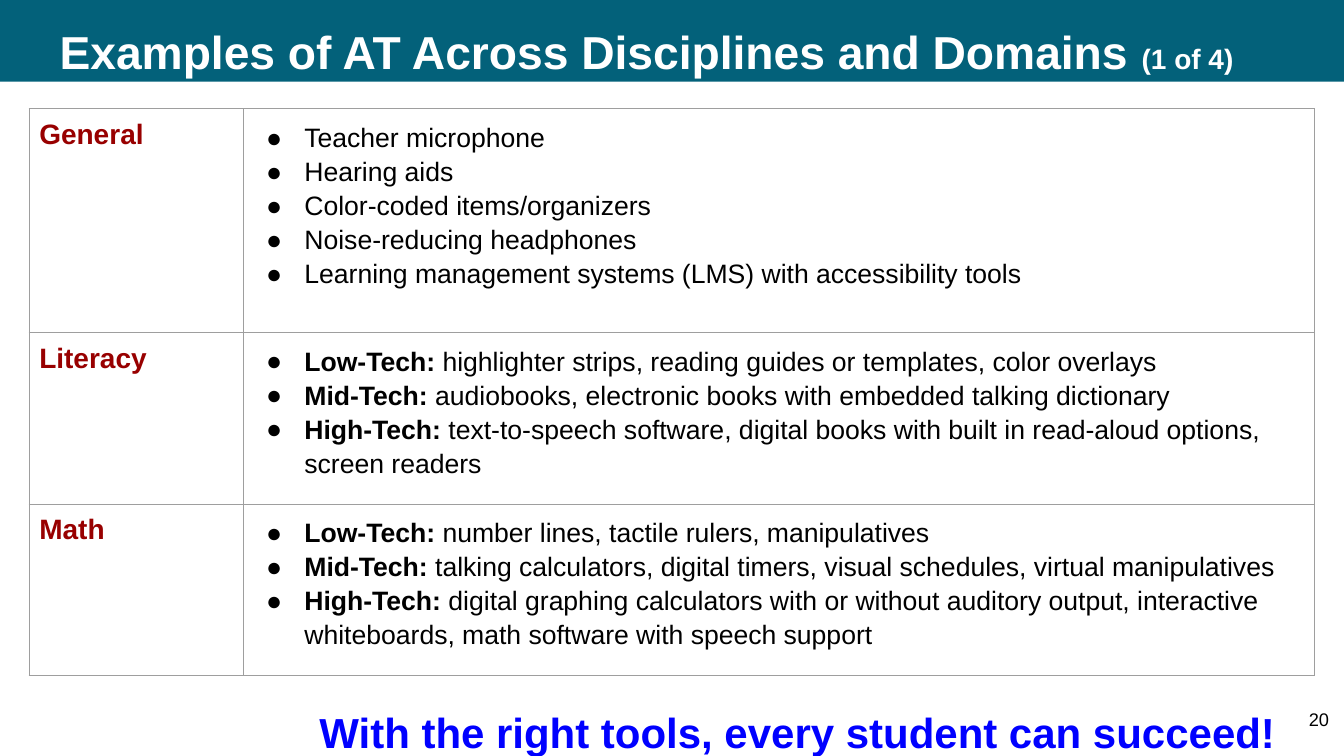
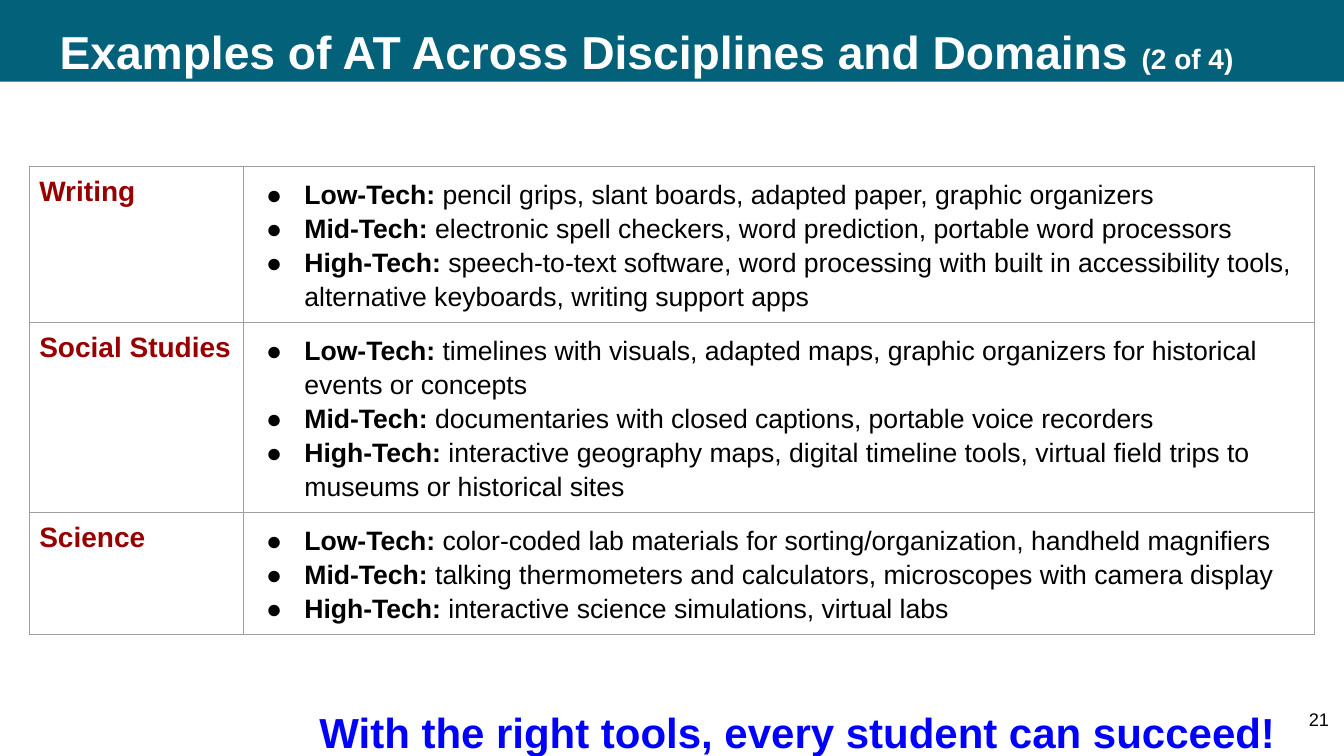
from lxml import etree
from pptx import Presentation
from pptx import util as u
from pptx.dml.color import RGBColor
from pptx.enum import shapes, text
from pptx.oxml import ns

TEAL = RGBColor(0x03, 0x61, 0x7A)
WHITE = RGBColor(0xFF, 0xFF, 0xFF)
BLACK = RGBColor(0, 0, 0)
BLUE = RGBColor(0, 0, 0xFF)
RED = RGBColor(0x98, 0, 0)
GREY = RGBColor(0x9E, 0x9E, 0x9E)
FONT = "Arial"
PAD = u.Inches(0.1)
TITLE = "Examples of AT Across Disciplines and Domains "
MOTTO = "With the right tools, every student can succeed!"
COLS = (15.98, 79.66)

PAGES = [
    ("20", "(1 of 4)", 14.4, [
        ("General", 29.6, [
            "Teacher microphone",
            "Hearing aids",
            "Color-coded items/organizers",
            "Noise-reducing headphones",
            "Learning management systems (LMS) with accessibility tools"]),
        ("Literacy", 22.7, [
            "Low-Tech: highlighter strips, reading guides or templates, color overlays",
            "Mid-Tech: audiobooks, electronic books with embedded talking dictionary",
            "High-Tech: text-to-speech software, digital books with built in read-aloud options, screen readers"]),
        ("Math", 22.7, [
            "Low-Tech: number lines, tactile rulers, manipulatives",
            "Mid-Tech: talking calculators, digital timers, visual schedules, virtual manipulatives",
            "High-Tech: digital graphing calculators with or without auditory output, interactive whiteboards, math software with speech support"]),
    ]),
    ("21", "(2 of 4)", 22, [
        ("Writing", 20.65, [
            "Low-Tech: pencil grips, slant boards, adapted paper, graphic organizers",
            "Mid-Tech: electronic spell checkers, word prediction, portable word processors",
            "High-Tech: speech-to-text software, word processing with built in accessibility tools, alternative keyboards, writing support apps"]),
        ("Social Studies", 25.1, [
            "Low-Tech: timelines with visuals, adapted maps, graphic organizers for historical events or concepts",
            "Mid-Tech: documentaries with closed captions, portable voice recorders",
            "High-Tech: interactive geography maps, digital timeline tools, virtual field trips to museums or historical sites"]),
        ("Science", 16.15, [
            "Low-Tech: color-coded lab materials for sorting/organization, handheld magnifiers",
            "Mid-Tech: talking thermometers and calculators, microscopes with camera display",
            "High-Tech: interactive science simulations, virtual labs"]),
    ]),
]


class Deck:
    def __init__(self):
        self.prs = Presentation()
        self.prs.slide_width = u.Inches(13.33)
        self.prs.slide_height = u.Inches(7.5)
        self.base = self.prs.slide_layouts[5]
        self.slide = None

    def wide(self, share):
        return round(self.prs.slide_width * share / 100)

    def high(self, share):
        return round(self.prs.slide_height * share / 100)

    def area(self, x, y, w, h):
        return self.wide(x), self.high(y), self.wide(w), self.high(h)

    def page(self):
        first = self.slide is None
        self.slide = self.prs.slides.add_slide(self.base)
        if first:
            self.band()

    def band(self):
        bar = self.slide.shapes.add_shape(
            shapes.MSO_SHAPE.RECTANGLE, *self.area(0, 0, 100, 10.8))
        bar.shadow.inherit = False
        bar.fill.solid()
        bar.fill.fore_color.rgb = TEAL
        bar.line.fill.background()
        self.base.shapes.element.insert(2, bar.element)

    def style(self, para, words, size, color, bold=False):
        run = para.add_run()
        run.text = words
        run.font.name = FONT
        run.font.size = u.Pt(size)
        run.font.bold = bold
        run.font.color.rgb = color

    def title(self, part):
        head = self.slide.shapes.title
        head.left, head.top, head.width, head.height = self.area(
            3.68, 0, 123.25, 14.4)
        frame = head.text_frame
        frame.auto_size = text.MSO_AUTO_SIZE.NONE
        frame.vertical_anchor = text.MSO_ANCHOR.MIDDLE
        para = frame.paragraphs[0]
        para.alignment = text.PP_ALIGN.LEFT
        para.line_spacing = 0.9
        self.style(para, TITLE, 33, WHITE, True)
        self.style(para, part, 20, WHITE, True)

    def label(self, words, area, size, color, bold=False,
              align=text.PP_ALIGN.LEFT):
        frame = self.slide.shapes.add_textbox(*self.area(*area)).text_frame
        frame.word_wrap = True
        frame.margin_left = frame.margin_right = PAD
        frame.margin_top = frame.margin_bottom = PAD
        para = frame.paragraphs[0]
        para.alignment = align
        self.style(para, words, size, color, bold)

    def frame(self, cell):
        cell.margin_left = cell.margin_right = PAD
        cell.margin_top = cell.margin_bottom = PAD
        props = cell._tc.get_or_add_tcPr()
        for side in ("a:lnL", "a:lnR", "a:lnT", "a:lnB"):
            line = etree.SubElement(props, ns.qn(side), w=str(u.Pt(0.75)))
            fill = etree.SubElement(line, ns.qn("a:solidFill"))
            etree.SubElement(fill, ns.qn("a:srgbClr"), val=str(GREY))
        cell.fill.background()

    def bullet(self, para, item):
        props = para._p.get_or_add_pPr()
        props.set("marL", str(u.Inches(0.5)))
        props.set("indent", str(u.Inches(-0.38)))
        color = etree.SubElement(props, ns.qn("a:buClr"))
        etree.SubElement(color, ns.qn("a:srgbClr"), val=str(BLACK))
        etree.SubElement(props, ns.qn("a:buFont"), typeface=FONT)
        etree.SubElement(props, ns.qn("a:buChar"), char="●")
        para.line_spacing = 1.15
        level, colon, rest = item.partition(":")
        if colon:
            self.style(para, level + colon, 19, BLACK, True)
        self.style(para, rest or level, 19, BLACK)

    def table(self, top, rows):
        total = sum(row[1] for row in rows)
        grid = self.slide.shapes.add_table(
            len(rows), 2, *self.area(2.17, top, sum(COLS), total)).table
        grid.first_row = grid.horz_banding = False
        for col, share in zip(grid.columns, COLS):
            col.width = self.wide(share)
        for row, (name, share, items) in zip(grid.rows, rows):
            row.height = self.high(share)
            left, right = row.cells
            self.frame(left)
            self.frame(right)
            self.style(left.text_frame.paragraphs[0], name, 20, RED, True)
            body = right.text_frame
            for i, item in enumerate(items):
                para = body.add_paragraph() if i else body.paragraphs[0]
                self.bullet(para, item)


def main():
    deck = Deck()
    for number, part, top, rows in PAGES:
        deck.page()
        deck.title(part)
        deck.table(top, rows)
        deck.label(MOTTO, (23.03, 92.13, 74.42, 9.47), 30, BLUE, True)
        deck.label(number, (93.62, 92.4, 6, 7.6), 13, BLACK,
                   align=text.PP_ALIGN.RIGHT)
    deck.prs.save("out.pptx")


if __name__ == "__main__":
    main()
